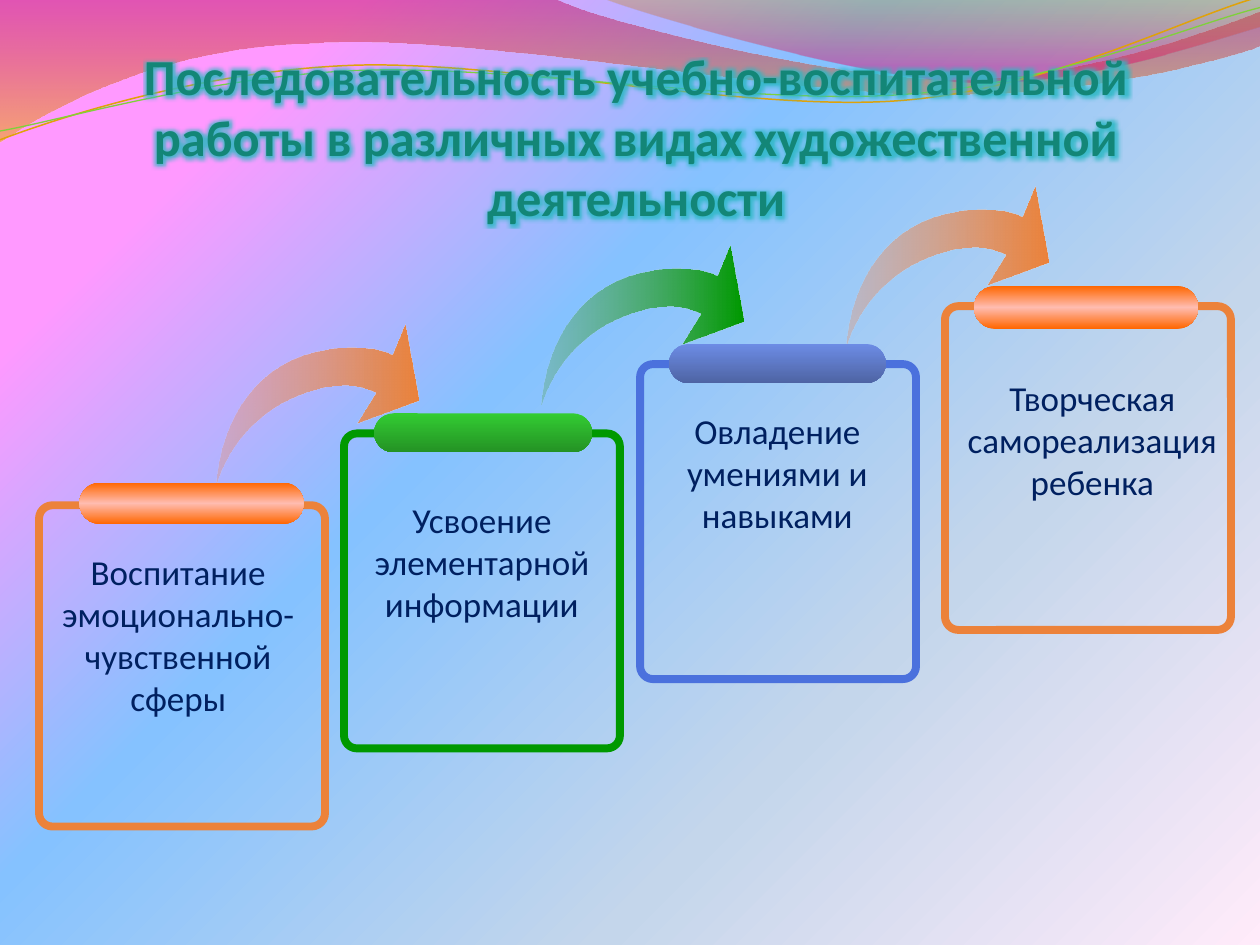
import lxml.etree
import pptx
import pptx.dml.color
import pptx.enum.shapes
import pptx.enum.text
import pptx.oxml
import pptx.oxml.ns
import pptx.util

Inches = pptx.util.Inches
Pt = pptx.util.Pt
qn = pptx.oxml.ns.qn

COLORS = {
    "title": "138677", "glow": "2AB8C4", "text": "002060",
    "orange": "EC823A", "orange_tail": "EE9366",
    "pill_orange": "FF6600", "pill_peach": "FFBCB0",
    "green": "009900", "green_tail": "5AA65A",
    "pill_green": "33CC33", "pill_forest": "249224",
    "blue": "4B71DD", "pill_blue": "6D8CE5", "pill_navy": "4E64A4",
    "pink": "FF99FF", "sky": "85C2FF", "mist": "C4D6EB", "blush": "FFEBFA",
    "crimson": "BD0059", "amber": "F0AB00", "ochre": "C38B00",
    "magenta": "E1006B", "gold": "E0A209", "lime": "7FD13B",
}
PILLS = {
    "orange": [(0, "pill_orange"), (50, "pill_peach"), (100, "pill_orange")],
    "green": [(0, "pill_green"), (100, "pill_forest")],
    "blue": [(0, "pill_blue"), (100, "pill_navy")],
}
CARDS = [
    ("Воспитание эмоционально-чувственной сферы", "orange",
     (0.31, 4.01, 2.27, 2.55), (0.63, 3.83, 1.78, 0.33), (0.35, 4.32, 2.13, 1.45)),
    ("Усвоение элементарной информации", "green",
     (2.73, 3.44, 2.19, 2.5), (2.97, 3.28, 1.73, 0.31), (2.73, 3.91, 2.19, 1.11)),
    ("Овладение умениями и навыками", "blue",
     (5.08, 2.89, 2.19, 2.5), (5.31, 2.73, 1.72, 0.31), (5.23, 3.2, 1.88, 1.11)),
    ("Творческая самореализация ребенка", "orange",
     (7.5, 2.43, 2.27, 2.57), (7.73, 2.27, 1.78, 0.34), (7.34, 2.94, 2.66, 1.11)),
]
ARROWS = [("orange", 1.72, 2.58), ("green", 4.3, 1.95), ("orange", 6.72, 1.48)]
ARROW_OUTLINE = [
    (0, 1.26), (0.04, 0.74, 0.32, 0.28, 0.88, 0.2), (1.08, 0.16, 1.3, 0.19, 1.39, 0.24),
    (1.49, 0), (1.6, 0.6), (1.11, 0.78), (1.26, 0.54),
    (1.14, 0.48, 0.97, 0.46, 0.8, 0.51), (0.36, 0.63, 0.11, 0.92, 0, 1.26),
]
WAVES = [
    ([(0, 0), (4.4, -0.01), (4.76, 0.17, 6.64, 0.63, 7.58, 0.63),
      (8.53, 0.63, 9.58, 0.26, 10, 0.09), (10.01, 0.36),
      (9.83, 0.44, 8.7, 0.76, 7.46, 0.75), (6.22, 0.75, 3.82, 0.28, 2.57, 0.34),
      (1.29, 0.36, 0.46, 0.83, -0.01, 1.13)],
     [(0, "crimson", 45), (100, "amber", 55)]),
    ([(4.79, -0.01), (5.09, 0.11, 6.82, 0.62, 7.69, 0.65),
      (8.56, 0.69, 9.61, 0.32, 10, 0.21), (10, 0)],
     [(0, "ochre", 30), (80, "magenta", 45)]),
]
STRANDS = [
    ([(0, 1.11), (0.48, 0.93, 1.58, 0.57, 2.77, 0.52),
      (3.95, 0.47, 5.93, 0.89, 7.13, 0.8), (8.33, 0.71, 9.38, 0.15, 9.98, -0.02)],
     "gold", 0.85),
    ([(0, 1.04), (0.47, 0.96, 1.64, 0.61, 2.83, 0.56),
      (4.03, 0.51, 5.97, 0.84, 7.17, 0.75), (8.36, 0.67, 9.41, 0.21, 10, 0.06)],
     "lime", 0.75),
]


def rgb(name):
    """Return the named colour."""
    return pptx.dml.color.RGBColor.from_string(COLORS[name])


def color_element(parent, name, opacity=100):
    """Add a colour with an opacity in percent to an XML parent."""
    color = lxml.etree.SubElement(parent, qn("a:srgbClr"), val=COLORS[name])
    if opacity < 100:
        lxml.etree.SubElement(color, qn("a:alpha"), val=str(opacity * 1000))


def set_gradient(properties, stops, angle):
    """Replace the solid fill of a properties element with a linear gradient."""
    gradient = pptx.oxml.parse_xml(
        f'<a:gradFill {pptx.oxml.ns.nsdecls("a")} rotWithShape="1">'
        f'<a:gsLst/><a:lin ang="{angle * 60000}" scaled="0"/></a:gradFill>')
    for position, *color in stops:
        stop = lxml.etree.SubElement(gradient[0], qn("a:gs"), pos=str(position * 1000))
        color_element(stop, *color)
    properties.replace(properties.find(qn("a:solidFill")), gradient)


def fill_gradient(shape, stops, angle):
    """Give a shape a gradient fill without a line."""
    shape.fill.solid()
    set_gradient(shape._element.spPr, stops, angle)
    shape.line.fill.background()


def add_outline(page, steps, left=0, top=0, close=True):
    """Draw points and cubic curves, given relative to left and top."""
    ends = [(Inches(left + step[-2]), Inches(top + step[-1])) for step in steps]
    builder = page.shapes.build_freeform(*ends[0])
    builder.add_line_segments(ends[1:], close=close)
    shape = builder.convert_to_shape()
    shape.shadow.inherit = False
    segments = list(shape._element.iter(qn("a:lnTo")))
    for segment, step in zip(segments, steps[1:]):
        if len(step) == 2:
            continue
        curve = lxml.etree.Element(qn("a:cubicBezTo"))
        for x, y in zip(step[::2], step[1::2]):
            lxml.etree.SubElement(curve, qn("a:pt"),
                                  x=str(Inches(left + x) - shape.left),
                                  y=str(Inches(top + y) - shape.top))
        segment.getparent().replace(segment, curve)
    return shape


def add_backdrop(page):
    """Paint the background, the waves and the thin strands."""
    page.background.fill.solid()
    set_gradient(page._element.find(".//" + qn("p:bgPr")),
                 [(16, "pink"), (40, "sky"), (70, "mist"), (100, "blush")], 45)
    for steps, stops in WAVES:
        fill_gradient(add_outline(page, steps), stops, 90)
    for steps, color, width in STRANDS:
        strand = add_outline(page, steps, close=False)
        strand.fill.background()
        strand.line.color.rgb = rgb(color)
        strand.line.width = Pt(width)


def add_span(para, text, size, color):
    """Add a centred run and return it."""
    para.alignment = pptx.enum.text.PP_ALIGN.CENTER
    span = para.add_run()
    span.text = text
    span.font.name = "Calibri"
    span.font.size = Pt(size)
    span.font.color.rgb = rgb(color)
    return span


def add_title(page, box):
    """Place the glowing title in the box, in front of the waves."""
    title = page.shapes.title
    title.left, title.top, title.width, title.height = map(Inches, box)
    frame = title.text_frame
    frame.word_wrap = True
    frame.auto_size = pptx.enum.text.MSO_AUTO_SIZE.NONE
    frame.vertical_anchor = pptx.enum.text.MSO_ANCHOR.BOTTOM
    frame.margin_left = frame.margin_right = frame.margin_bottom = 0
    frame.margin_top = Inches(0.05)
    span = add_span(
        frame.paragraphs[0], "Последовательность учебно-воспитательной работы "
        "в различных видах художественной деятельности", 28.8, "title")
    span.font.bold = True
    effects = lxml.etree.Element(qn("a:effectLst"))
    glow = lxml.etree.SubElement(effects, qn("a:glow"), rad=str(Pt(5)))
    color_element(glow, "glow", 85)
    span.font.fill._xPr.find(qn("a:solidFill")).addnext(effects)
    page.shapes._spTree.append(title._element)


def add_rounded(page, box, adjustment):
    """Add a rounded rectangle without a shadow."""
    shape = page.shapes.add_shape(
        pptx.enum.shapes.MSO_SHAPE.ROUNDED_RECTANGLE, *map(Inches, box))
    shape.adjustments[0] = adjustment
    shape.shadow.inherit = False
    return shape


def add_card(page, text, color, box, pill_box, text_box):
    """Add one step: a frame, the pill on its top edge and its text."""
    border = add_rounded(page, box, 0.047)
    border.fill.background()
    border.line.color.rgb = rgb(color)
    border.line.width = Pt(4.5)
    fill_gradient(add_rounded(page, pill_box, 0.5), PILLS[color], 90)
    label = page.shapes.add_textbox(*map(Inches, text_box))
    label.text_frame.word_wrap = True
    label.text_frame.auto_size = pptx.enum.text.MSO_AUTO_SIZE.SHAPE_TO_FIT_TEXT
    add_span(label.text_frame.paragraphs[0], text, 20, "text")


def main():
    """Build and save the deck."""
    deck = pptx.Presentation()
    deck.slide_width, deck.slide_height = Inches(10), Inches(7.5)
    page = deck.slides.add_slide(deck.slide_layouts[5])
    add_backdrop(page)
    add_title(page, (0.55, 0.55, 9, 1.25))
    for color, left, top in ARROWS:
        arrow = add_outline(page, ARROW_OUTLINE, left, top)
        fill_gradient(arrow, [(0, color + "_tail", 32), (100, color)], 0)
    for card in CARDS:
        add_card(page, *card)
    deck.save("out.pptx")


if __name__ == "__main__":
    main()
